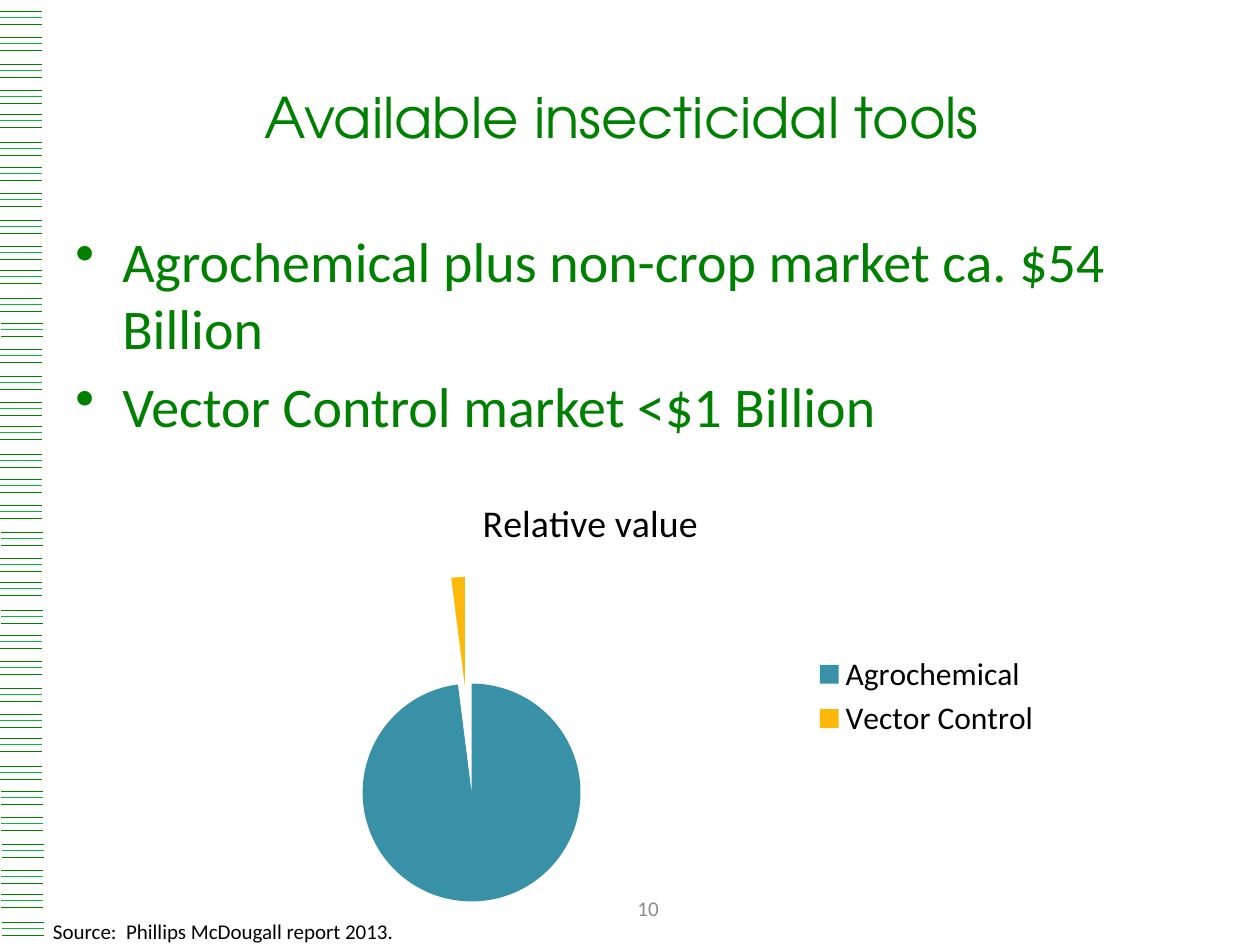
from dataclasses import dataclass

from lxml.etree import SubElement
from pptx import Presentation
from pptx.chart.data import CategoryChartData
from pptx.dml.color import RGBColor
from pptx.enum.chart import XL_CHART_TYPE as ChartType, XL_LEGEND_POSITION as LegendPosition
from pptx.enum.shapes import MSO_CONNECTOR as Connector
from pptx.enum.text import MSO_ANCHOR as Anchor, MSO_AUTO_SIZE as AutoSize, PP_ALIGN as Align
from pptx.oxml.ns import qn
from pptx.oxml.xmlchemy import OxmlElement
from pptx.util import Emu, Pt

EMU_PER_PX = 914400 / 126


@dataclass(frozen=True)
class Theme:
    """Colours, fonts and type sizes of the slide."""
    green: str = "008000"
    bright_green: str = "0AB443"
    grey: str = "8C8C8C"
    black: str = "000000"
    teal: str = "3891A7"
    amber: str = "FEB80A"
    heading_font: str = "TeX Gyre Adventor"
    body_font: str = "Calibri"
    large: float = 32
    chart_title: float = 21.6
    legend: float = 18
    small: float = 12


THEME = Theme()


def px(length):
    """Turn pixels into EMU."""
    return Emu(round(length * EMU_PER_PX))


def apply_format(target, values):
    """Set every attribute named in values."""
    for name, value in values.items():
        setattr(target, name, value)


def style_font(font, size, color, name=THEME.body_font):
    """Give a font its face, size and colour."""
    apply_format(font, {"name": name, "size": Pt(size), "bold": False})
    font.color.rgb = RGBColor.from_string(color)


def set_hanging_indent(paragraph, indent, bullet=None):
    """Hang the first line to the left, with an optional bullet."""
    properties = paragraph._p.get_or_add_pPr()
    properties.set("marL", str(px(indent)))
    properties.set("indent", str(-px(indent)))
    if bullet:
        SubElement(properties, qn("a:buChar"), char=bullet)


def add_text(slide, box, lines, size, color, font=THEME.body_font, frame_format=None,
             paragraph_format=None, indent=0, bullet=None, gap=0):
    """Add a text box with one paragraph per line."""
    frame = slide.shapes.add_textbox(*map(px, box)).text_frame
    apply_format(frame, {"word_wrap": True, **(frame_format or {})})
    for index, line in enumerate(lines):
        paragraph = frame.add_paragraph() if index else frame.paragraphs[0]
        if indent:
            set_hanging_indent(paragraph, indent, bullet)
        if index:
            paragraph.space_before = Pt(gap)
        apply_format(paragraph, paragraph_format or {})
        run = paragraph.add_run()
        run.text = line
        style_font(run.font, size, color, font)


def add_stripe(slide, left, top, color):
    """Add one thin horizontal stripe of the side border."""
    stripe = slide.shapes.add_connector(
        Connector.STRAIGHT, px(left), px(top), px(left + 42), px(top))
    stripe.line.width = Pt(0.5)
    stripe.line.color.rgb = RGBColor.from_string(color)
    SubElement(stripe._element.spPr, qn("a:effectLst"))


def add_side_border(slide):
    """Repeat groups of three stripes down the left edge."""
    group_tops = (0, 26, 53, 79, 103, 131)
    stripes = ((0, THEME.green), (6, THEME.bright_green), (13, THEME.green))
    shifts = {12: 1, 20: 1, 23: 1, 30: 1, 31: 1, 32: 2, 33: 1, 34: 1, 35: 2}
    for group in range(36):
        cycle, step = divmod(group, len(group_tops))
        top = 11 + cycle * 156 + group_tops[step]
        for offset, color in stripes:
            add_stripe(slide, shifts.get(group, 0), top + offset, color)


def add_market_pie(slide, box):
    """Add the exploded pie that compares both markets."""
    markets = CategoryChartData()
    markets.categories = ["Agrochemical", "Vector Control"]
    markets.add_series("Relative value", (98, 2))
    pie = slide.shapes.add_chart(ChartType.PIE, *map(px, box), markets).chart
    style_font(pie.font, THEME.legend, THEME.black)

    pie.has_title = True
    title = pie.chart_title.text_frame
    title.text = "Relative value"
    style_font(title.paragraphs[0].runs[0].font, THEME.chart_title, THEME.black)

    pie.has_legend = True
    apply_format(pie.legend, {"position": LegendPosition.RIGHT, "include_in_layout": False})
    style_font(pie.legend.font, THEME.legend, THEME.black)

    pie.plots[0].vary_by_categories = True
    series = pie.plots[0].series[0]
    explosion = OxmlElement("c:explosion")
    explosion.set("val", "49")
    series._element.find(qn("c:tx")).addnext(explosion)
    for index, color in enumerate((THEME.teal, THEME.amber)):
        fill = series.points[index].format.fill
        fill.solid()
        fill.fore_color.rgb = RGBColor.from_string(color)


def main():
    """Build and save the slide."""
    deck = Presentation()
    apply_format(deck, {"slide_width": px(1260), "slide_height": px(945)})
    slide = deck.slides.add_slide(deck.slide_layouts[6])
    middle = {"vertical_anchor": Anchor.MIDDLE}
    centred = {"alignment": Align.CENTER}
    flush_bottom = {"vertical_anchor": Anchor.BOTTOM, "auto_size": AutoSize.SHAPE_TO_FIT_TEXT,
                    "margin_left": 0, "margin_right": 0, "margin_top": 0, "margin_bottom": 0}

    add_side_border(slide)
    add_text(slide, (501, 883, 294, 50), ["10"], THEME.small, THEME.grey,
             frame_format=middle, paragraph_format=centred)
    add_text(slide, (63, 38, 1134, 157), ["Available insecticidal tools "], THEME.large,
             THEME.green, THEME.heading_font, middle, centred)
    add_text(slide, (63, 220, 1134, 624),
             ["Agrochemical plus non-crop market ca. $54 Billion",
              "Vector Control market <$1 Billion"],
             THEME.large, THEME.green, indent=47, bullet="•", gap=6.4)
    add_market_pie(slide, (127, 474, 927, 445))
    add_text(slide, (53, 919, 799, 25), ["Source:  Phillips McDougall report 2013."],
             THEME.small, THEME.black, frame_format=flush_bottom,
             paragraph_format={"space_after": Pt(2.1)}, indent=28)
    deck.save("out.pptx")


if __name__ == "__main__":
    main()
